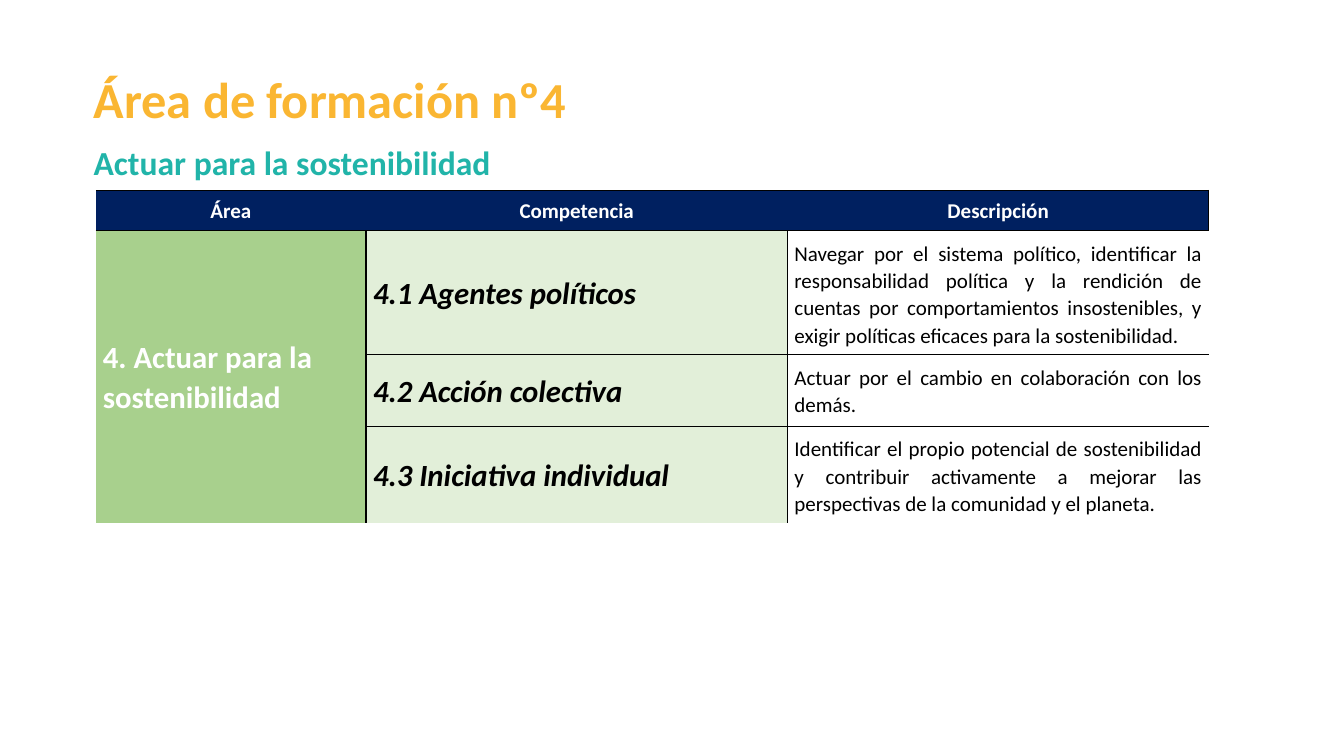
from lxml import etree
from pptx import Presentation
from pptx.dml.color import RGBColor
from pptx.enum.text import MSO_ANCHOR, MSO_AUTO_SIZE, PP_ALIGN
from pptx.oxml.ns import qn
from pptx.util import Inches, Pt

LEFT, CENTER, JUSTIFY = PP_ALIGN.LEFT, PP_ALIGN.CENTER, PP_ALIGN.JUSTIFY
TOP, MIDDLE = MSO_ANCHOR.TOP, MSO_ANCHOR.MIDDLE
GROW = MSO_AUTO_SIZE.SHAPE_TO_FIT_TEXT

WHITE = RGBColor(0xFF, 0xFF, 0xFF)
BLACK = RGBColor(0x00, 0x00, 0x00)
ORANGE = RGBColor(0xFA, 0xB6, 0x32)
TEAL = RGBColor(0x21, 0xB4, 0xA9)
NAVY = RGBColor(0x00, 0x20, 0x60)
GREEN = RGBColor(0xA8, 0xD0, 0x8D)
PALE_GREEN = RGBColor(0xE2, 0xEF, 0xD9)

FONT = "Calibri"
NO_STYLE = "{2D5ABB26-0587-4C30-8999-92F81FD0307C}"
COL_WIDTHS = [2.68, 4.18, 4.18]
TABLE_LEFT = 0.95


def add_plain_table(slide, top, heights):
    """Add an unstyled table with the shared column widths."""
    gf = slide.shapes.add_table(
        len(heights), len(COL_WIDTHS), Inches(TABLE_LEFT), Inches(top),
        Inches(sum(COL_WIDTHS)), Inches(sum(heights)))
    table = gf.table
    table.first_row = table.horz_banding = False
    table._tbl.tblPr.find(qn("a:tableStyleId")).text = NO_STYLE
    for column, width in zip(table.columns, COL_WIDTHS):
        column.width = Inches(width)
    for row, height in zip(table.rows, heights):
        row.height = Inches(height)
    return table


def set_cell(cell, text, size, color, fill, align, borders,
             bold=False, italic=False, anchor=MIDDLE, top=0):
    """Write one cell; borders names its black sides, in the order LRTB."""
    cell.margin_left = cell.margin_right = Inches(0.07)
    cell.margin_top, cell.margin_bottom = Inches(top), 0
    cell.vertical_anchor = anchor
    p = cell.text_frame.paragraphs[0]
    p.text = text
    p.alignment = align
    p.line_spacing = 1.06
    font = p.runs[0].font
    font.name, font.size = FONT, Pt(size)
    font.bold, font.italic = bold, italic
    font.color.rgb = color
    tcPr = cell._tc.get_or_add_tcPr()
    for side in borders:
        ln = etree.SubElement(tcPr, qn("a:ln" + side), w=str(Pt(1)))
        solid = etree.SubElement(ln, qn("a:solidFill"))
        etree.SubElement(solid, qn("a:srgbClr"), val=str(BLACK))
    if fill is None:
        cell.fill.background()
    else:
        cell.fill.solid()
        cell.fill.fore_color.rgb = fill


prs = Presentation()
prs.slide_width, prs.slide_height = Inches(13.33), Inches(7.5)
s = prs.slides.add_slide(prs.slide_layouts[6])

# Title and subtitle
headings = [
    ("Actuar para la sostenibilidad", 1.36, 8.41, 0.5, 24, TEAL),
    ("Área de formación nº4", 0.63, 8.98, 0.71, 36, ORANGE),
]
for text, top, width, height, size, color in headings:
    tf = s.shapes.add_textbox(Inches(0.83), Inches(top),
                              Inches(width), Inches(height)).text_frame
    tf.word_wrap = True
    tf.auto_size = GROW
    tf.text = text
    font = tf.paragraphs[0].runs[0].font
    font.name, font.size, font.bold = FONT, Pt(size), True
    font.color.rgb = color

# Header table
header = add_plain_table(s, 1.89, [0.4])
for col, (label, borders) in enumerate(
        [("Área", "TB"), ("Competencia", "TB"), ("Descripción", "RTB")]):
    set_cell(header.cell(0, col), label, 15, WHITE, NAVY, CENTER, borders,
             bold=True)

# Competence table
competences = [
    ("4.1 Agentes políticos", 1.23,
     "Navegar por el sistema político, identificar la responsabilidad "
     "política y la rendición de cuentas por comportamientos insostenibles, "
     "y exigir políticas eficaces para la sostenibilidad."),
    ("4.2 Acción colectiva", 0.71,
     "Actuar por el cambio en colaboración con los demás."),
    ("4.3 Iniciativa individual", 0.96,
     "Identificar el propio potencial de sostenibilidad y contribuir "
     "activamente a mejorar las perspectivas de la comunidad y el planeta."),
]
body = add_plain_table(s, 2.29, [height for _, height, _ in competences])
area = body.cell(0, 0)
area.merge(body.cell(len(competences) - 1, 0))
set_cell(area, "4. Actuar para la sostenibilidad", 22, WHITE, GREEN, LEFT,
         "RT", bold=True)
for row, (name, _, description) in enumerate(competences):
    borders = "LRT" if row == len(competences) - 1 else "LRTB"
    set_cell(body.cell(row, 1), name, 22, BLACK, PALE_GREEN, JUSTIFY, borders,
             bold=True, italic=True)
    set_cell(body.cell(row, 2), description, 15, BLACK, None, JUSTIFY,
             borders.replace("R", ""), anchor=TOP, top=0.09)

prs.save("out.pptx")
